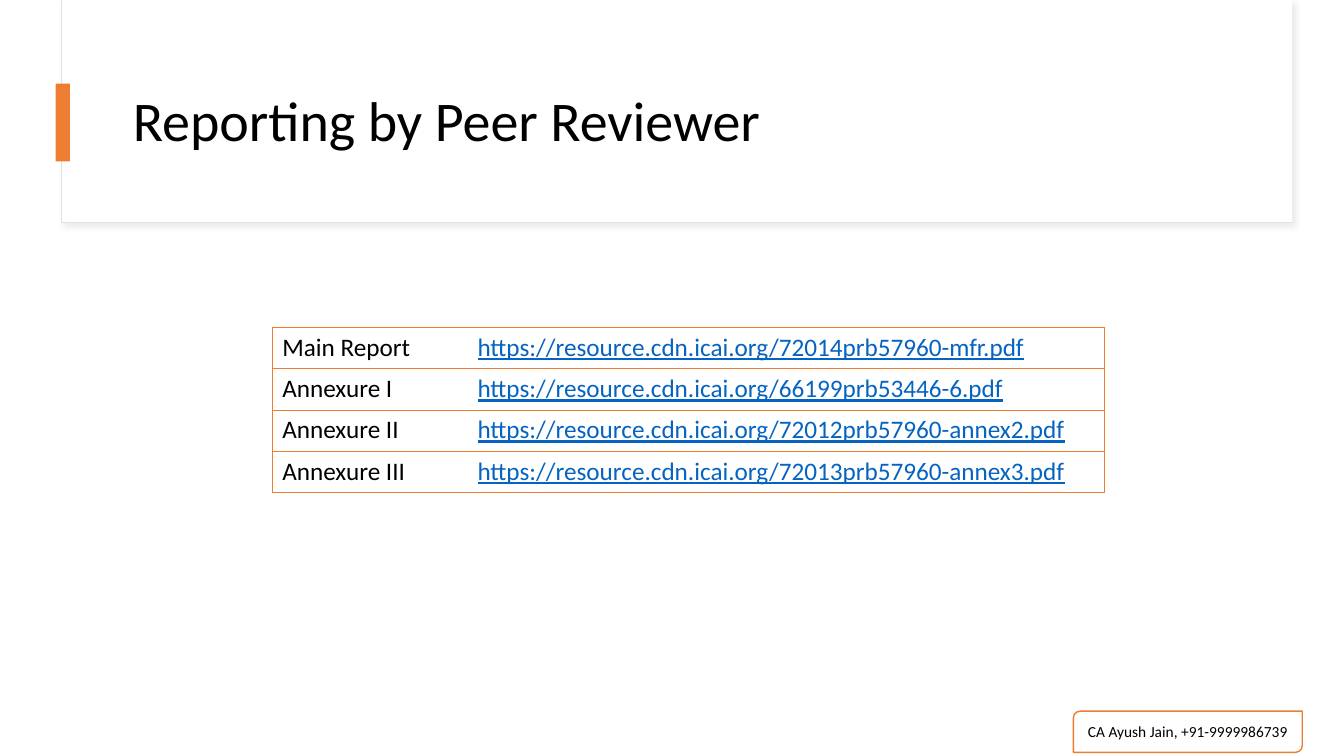
from lxml import etree
from pptx import Presentation
from pptx.dml.color import RGBColor
from pptx.enum.shapes import MSO_SHAPE
from pptx.enum.text import MSO_ANCHOR, PP_ALIGN
from pptx.oxml import parse_xml
from pptx.oxml.ns import qn
from pptx.util import Cm, Pt

RECT = MSO_SHAPE.RECTANGLE
LEAF = MSO_SHAPE.ROUND_2_DIAG_RECTANGLE
MIDDLE = MSO_ANCHOR.MIDDLE
CENTER = PP_ALIGN.CENTER

FONT = "Calibri"
COLORS = {
    "white": "FFFFFF",
    "black": "000000",
    "accent": "ED7D31",
    "frame": "E1E1E1",
    "shade": "D9D9D9",
    "link": "0563C1",
}
NS = "http://schemas.openxmlformats.org/drawingml/2006/main"
SITE = "https://resource.cdn.icai.org/"
REPORTS = [
    ("Main Report", "72014prb57960-mfr.pdf"),
    ("Annexure I", "66199prb53446-6.pdf"),
    ("Annexure II", "72012prb57960-annex2.pdf"),
    ("Annexure III", "72013prb57960-annex3.pdf"),
]


def color(name):
    return RGBColor.from_string(COLORS[name])


def write(frame, text, size, ink="black"):
    frame.word_wrap = True
    para = frame.paragraphs[0]
    para.text = text
    para.font.name = FONT
    para.font.size = Pt(size)
    para.font.color.rgb = color(ink)
    return para


def add_box(slide, box, fill, line=None, width=1, kind=RECT):
    shape = slide.shapes.add_shape(kind, *map(Cm, box))
    shape.shadow.inherit = False
    shape.fill.solid()
    shape.fill.fore_color.rgb = color(fill)
    if line:
        shape.line.color.rgb = color(line)
        shape.line.width = Pt(width)
    else:
        shape.line.fill.background()
    return shape


def add_shade(shape):
    effects = shape._element.spPr.find(qn("a:effectLst"))
    effects.append(parse_xml(
        f'<a:outerShdw xmlns:a="{NS}" blurRad="{Pt(4)}" dist="{Pt(3)}" '
        f'dir="2700000" algn="tl" rotWithShape="0">'
        f'<a:srgbClr val="{COLORS["shade"]}"><a:alpha val="50000"/></a:srgbClr>'
        f'</a:outerShdw>'))


def add_header(slide, box, text):
    left, top, width, height = box
    add_shade(add_box(slide, box, "white", "frame", 0.75))
    add_box(slide, (left + 0.02, top, width - 0.02, height - 0.02), "white")
    title = slide.shapes.add_textbox(
        Cm(left + 1.55), Cm(top + 1.47), Cm(width - 2.77), Cm(3.28))
    title.text_frame.vertical_anchor = MIDDLE
    write(title.text_frame, text, 40).line_spacing = 0.9
    add_box(slide, (left - 0.15, top + 2.11, 0.36, 1.96), "accent")


def set_edges(cell, shown):
    props = cell._tc.get_or_add_tcPr()
    for side in "LRTB":
        edge = etree.SubElement(props, qn(f"a:ln{side}"), w=str(Pt(0.5)))
        if side in shown:
            fill = etree.SubElement(edge, qn("a:solidFill"))
            etree.SubElement(fill, qn("a:srgbClr"), val=COLORS["accent"])
        else:
            etree.SubElement(edge, qn("a:noFill"))
    cell.fill.background()


def add_reports(slide, box):
    table = slide.shapes.add_table(len(REPORTS), 2, *map(Cm, box)).table
    table.first_row = False
    table.horz_banding = False
    table.columns[0].width = Cm(4.92)
    table.columns[1].width = Cm(box[2] - 4.92)
    for row, (name, file) in enumerate(REPORTS):
        label, link = table.cell(row, 0), table.cell(row, 1)
        write(label.text_frame, name, 18)
        write(link.text_frame, SITE + file, 18, "link").font.underline = True
        set_edges(label, "LTB")
        set_edges(link, "RTB")


def add_footer(slide, box, text):
    badge = add_box(slide, box, "white", "accent", 1, LEAF)
    badge.text_frame.vertical_anchor = MIDDLE
    write(badge.text_frame, text, 11).alignment = CENTER


def main():
    deck = Presentation()
    deck.slide_width, deck.slide_height = Cm(33.87), Cm(19.05)
    slide = deck.slides.add_slide(deck.slide_layouts[6])
    add_header(slide, (1.55, 0, 31.01, 5.61), "Reporting by Peer Reviewer")
    add_reports(slide, (6.86, 8.25, 20.98, 4.16))
    add_footer(slide, (27.05, 17.92, 5.77, 1.04), "CA Ayush Jain, +91-9999986739")
    deck.save("out.pptx")


if __name__ == "__main__":
    main()
